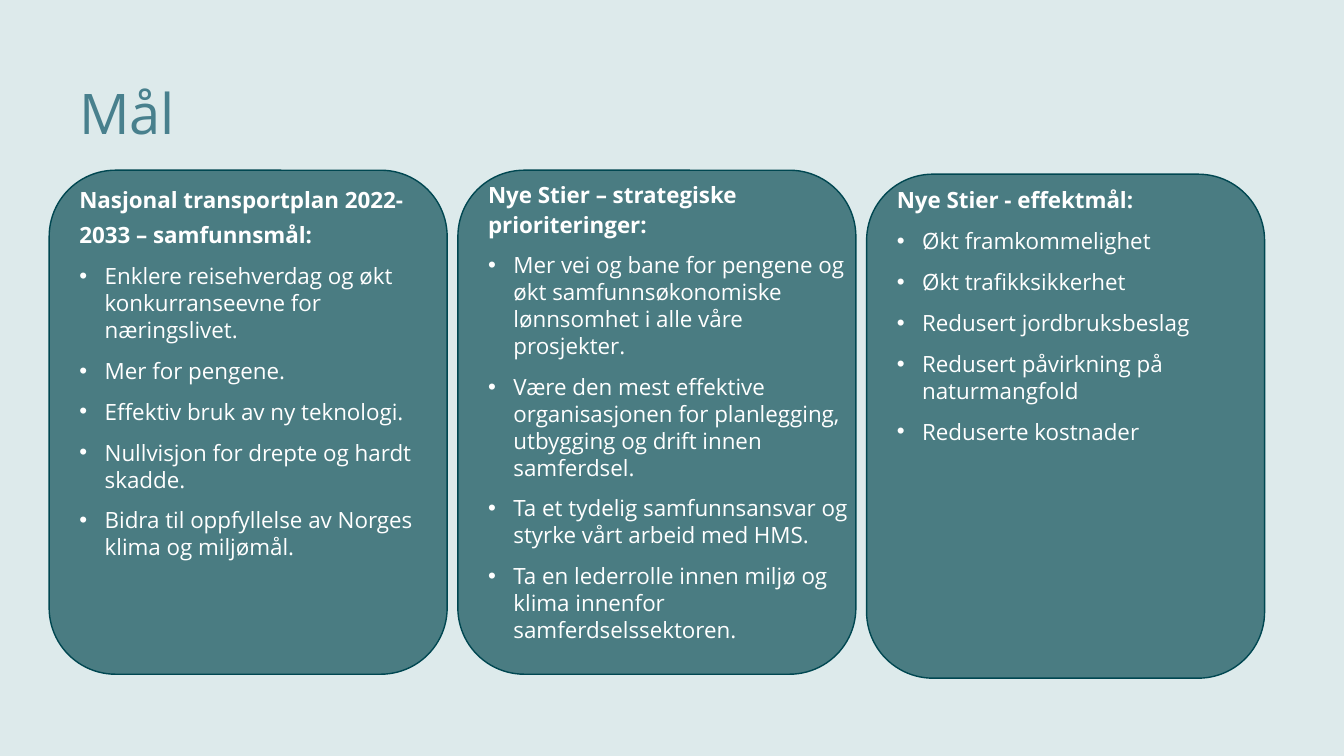
from dataclasses import dataclass

from lxml import etree
from pptx import Presentation
from pptx.dml.color import RGBColor
from pptx.enum import shapes, text
from pptx.oxml import ns
from pptx.util import Cm, Pt

COLORS = {
    "background": "DDEAEB",
    "title": "48808D",
    "card": "4A7C82",
    "border": "004751",
    "text": "FFFFFF",
}
FONT = "Open Sans"
LEFT, PITCH = 1.24, 10.3
CARD_WIDTH, CARD_HEIGHT = 10.03, 12.7
TEXT_INSET, TEXT_TOP = 0.76, 4.5
TEXT_WIDTH, TEXT_HEIGHT = 9.27, 12.5
BULLET_INDENT = 0.64


@dataclass
class GoalCard:
    heading: str
    goals: list[str]
    top: float = 4.29
    heading_spacing: float = 1.3


CARDS = [
    GoalCard(
        "Nasjonal transportplan 2022-2033 – samfunnsmål:",
        [
            "Enklere reisehverdag og økt konkurranseevne for næringslivet.",
            "Mer for pengene.",
            "Effektiv bruk av ny teknologi.",
            "Nullvisjon for drepte og hardt skadde.",
            "Bidra til oppfyllelse av Norges klima og miljømål.",
        ],
    ),
    GoalCard(
        "Nye Stier – strategiske prioriteringer:",
        [
            "Mer vei og bane for pengene og økt samfunnsøkonomiske "
            "lønnsomhet i alle våre prosjekter.",
            "Være den mest effektive organisasjonen for planlegging, "
            "utbygging og drift innen samferdsel.",
            "Ta et tydelig samfunnsansvar og styrke vårt arbeid med HMS.",
            "Ta en lederrolle innen miljø og klima innenfor samferdselssektoren.",
        ],
        heading_spacing=1.1,
    ),
    GoalCard(
        "Nye Stier - effektmål:",
        [
            "Økt framkommelighet",
            "Økt trafikksikkerhet",
            "Redusert jordbruksbeslag",
            "Redusert påvirkning på naturmangfold",
            "Reduserte kostnader",
        ],
        top=4.39,
    ),
]


def rgb(name: str) -> RGBColor:
    return RGBColor.from_string(COLORS[name])


def style_runs(p, size: float, color: str, bold: bool = False) -> None:
    for r in p.runs:
        r.font.name = FONT
        r.font.size = Pt(size)
        r.font.bold = bold
        r.font.color.rgb = rgb(color)


def add_text_frame(slide, left: float, top: float, width: float, height: float):
    """Add a wrapping text box without margins and return its text frame."""
    tf = slide.shapes.add_textbox(Cm(left), Cm(top), Cm(width), Cm(height)).text_frame
    tf.word_wrap = True
    tf.margin_left = tf.margin_right = tf.margin_top = tf.margin_bottom = 0
    return tf


def add_bullet(p) -> None:
    pPr = p._p.get_or_add_pPr()
    pPr.set("marL", str(Cm(BULLET_INDENT)))
    pPr.set("indent", str(-Cm(BULLET_INDENT)))
    etree.SubElement(pPr, ns.qn("a:buFont"), typeface="Arial")
    etree.SubElement(pPr, ns.qn("a:buChar"), char="•")


def add_card(slide, card: GoalCard, left: float) -> None:
    sp = slide.shapes.add_shape(
        shapes.MSO_SHAPE.ROUNDED_RECTANGLE,
        Cm(left), Cm(card.top), Cm(CARD_WIDTH), Cm(CARD_HEIGHT),
    )
    sp.shadow.inherit = False
    sp.fill.solid()
    sp.fill.fore_color.rgb = rgb("card")
    sp.line.color.rgb = rgb("border")
    sp.line.width = Pt(1)

    tf = add_text_frame(slide, left + TEXT_INSET, TEXT_TOP, TEXT_WIDTH, TEXT_HEIGHT)
    tf.text = card.heading
    heading = tf.paragraphs[0]
    heading.line_spacing = card.heading_spacing
    style_runs(heading, 16, "text", bold=True)
    for goal in card.goals:
        p = tf.add_paragraph()
        p.text = goal
        p.space_before = Pt(10)
        add_bullet(p)
        style_runs(p, 16, "text")


def main() -> None:
    prs = Presentation()
    prs.slide_width, prs.slide_height = Cm(33.87), Cm(19.05)
    slide = prs.slides.add_slide(prs.slide_layouts[6])
    slide.background.fill.solid()
    slide.background.fill.fore_color.rgb = rgb("background")

    title = add_text_frame(slide, LEFT + TEXT_INSET, 1.83, 30.96, 2)
    title.vertical_anchor = text.MSO_ANCHOR.MIDDLE
    title.text = "Mål"
    style_runs(title.paragraphs[0], 40, "title")

    for i, card in enumerate(CARDS):
        add_card(slide, card, LEFT + i * PITCH)
    prs.save("out.pptx")


if __name__ == "__main__":
    main()
